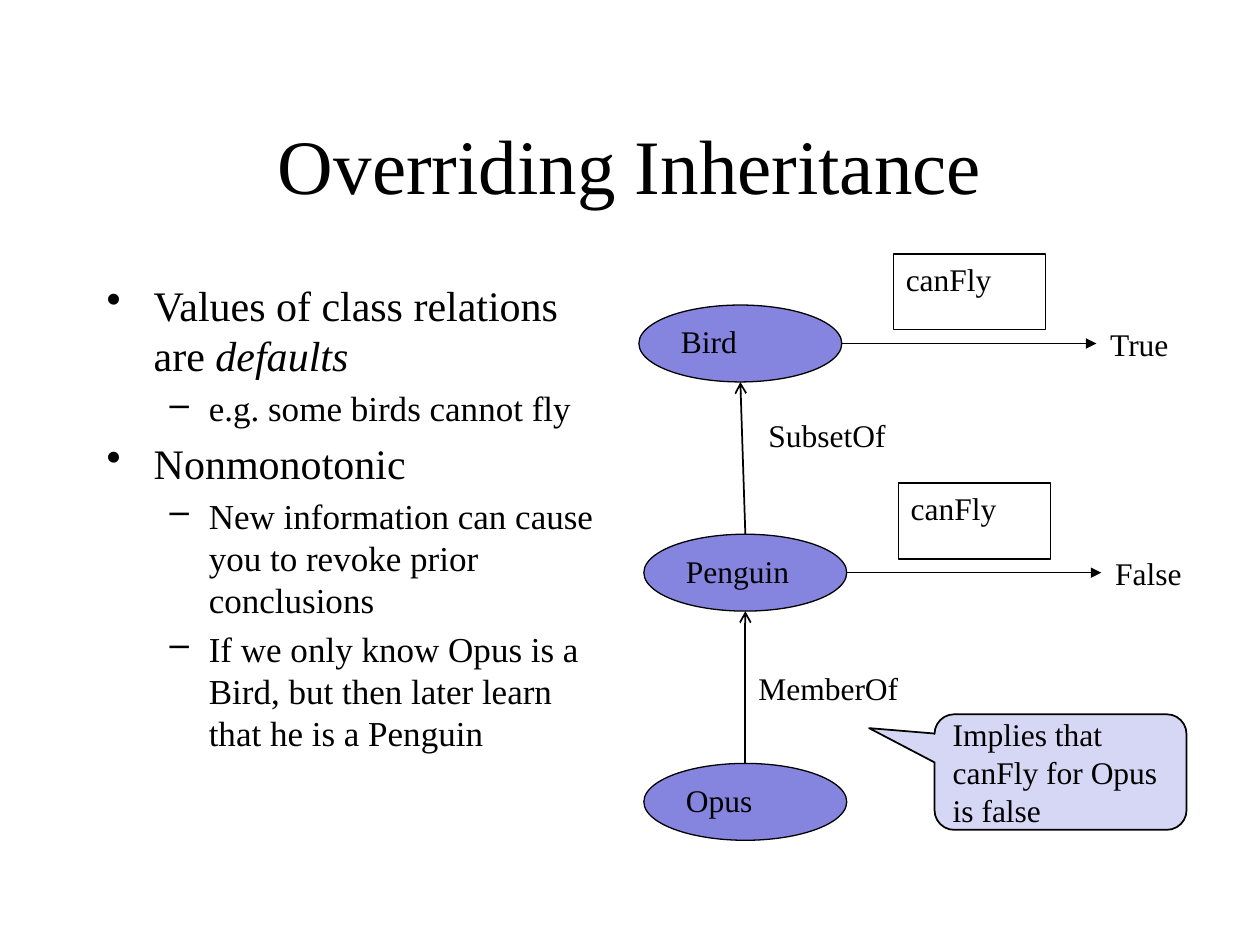
"""Build a slide on overriding inherited defaults in a semantic network."""
from lxml.etree import SubElement
from pptx import Presentation
from pptx.dml.color import RGBColor
from pptx.enum.shapes import MSO_CONNECTOR as CONN, MSO_SHAPE as SHAPE
from pptx.enum.text import MSO_ANCHOR as ANCHOR, PP_ALIGN as ALIGN
from pptx.oxml.ns import qn
from pptx.util import Cm, Pt

FONT = "Times New Roman"
COLORS = {"ink": "000000", "node": "8585E0", "box": "FFFFFF", "note": "D6D6F5"}
NODE_W, NODE_H = 4.09, 1.55
NODES = [
    ("Bird", 12.88, 6.15, "True"),
    ("Penguin", 12.98, 10.77, "False"),
    ("Opus", 12.98, 15.39, None),
]
RELATIONS = [("SubsetOf", 15.24, 8.26), ("MemberOf", 15.04, 13.36)]
BULLETS = [
    (0, [("Values of class relations are ", False), ("defaults", True)]),
    (1, [("e.g. some birds cannot fly", False)]),
    (0, [("Nonmonotonic", False)]),
    (1, [("New information can cause you to revoke prior conclusions", False)]),
    (1, [("If we only know Opus is a Bird, but then later learn that he is a Penguin", False)]),
]
LEVELS = [("•", 24, 0.95, 0.95), ("–", 20, 2.06, 0.79)]


def color(name):
    return RGBColor.from_string(COLORS[name])


def format_run(r, size, italic=False):
    r.font.name, r.font.size, r.font.italic = FONT, Pt(size), italic
    r.font.color.rgb = color("ink")


def set_text(sp, text, size=18, anchor=ANCHOR.TOP, align=ALIGN.LEFT):
    tf = sp.text_frame
    tf.text = text
    tf.word_wrap = True
    tf.vertical_anchor = anchor
    p = tf.paragraphs[0]
    p.alignment = align
    format_run(p.runs[0], size)


def add_title(s, text):
    sp = s.shapes.title
    sp.left, sp.top, sp.width, sp.height = Cm(1.9), Cm(1.7), Cm(21.6), Cm(3.18)
    set_text(sp, text, 44, ANCHOR.MIDDLE, ALIGN.CENTER)


def add_bullets(s, x, y, w, h):
    tf = s.shapes.add_textbox(Cm(x), Cm(y), Cm(w), Cm(h)).text_frame
    tf.word_wrap = True
    for i, (level, parts) in enumerate(BULLETS):
        p = tf.add_paragraph() if i else tf.paragraphs[0]
        mark, size, margin, hang = LEVELS[level]
        p.level = level
        p.space_before = Pt(size * 0.2)
        pPr = p._p.get_or_add_pPr()
        pPr.set("marL", str(Cm(margin)))
        pPr.set("indent", str(-Cm(hang)))
        SubElement(pPr, qn("a:buChar"), char=mark)
        for text, italic in parts:
            r = p.add_run()
            r.text = text
            format_run(r, size, italic)


def add_label(s, text, x, y, w, h, anchor=ANCHOR.TOP):
    set_text(s.shapes.add_textbox(Cm(x), Cm(y), Cm(w), Cm(h)), text, anchor=anchor)


def add_box(s, kind, text, x, y, w, h, fill, line=0.75, anchor=ANCHOR.TOP):
    sp = s.shapes.add_shape(kind, Cm(x), Cm(y), Cm(w), Cm(h))
    sp.shadow.inherit = False
    sp.fill.solid()
    sp.fill.fore_color.rgb = color(fill)
    sp.line.color.rgb = color("ink")
    sp.line.width = Pt(line)
    set_text(sp, text, anchor=anchor)
    return sp


def add_arrow(s, x1, y1, x2, y2, head, width):
    c = s.shapes.add_connector(CONN.STRAIGHT, Cm(x1), Cm(y1), Cm(x2), Cm(y2))
    c.line.color.rgb = color("ink")
    c.line.width = Pt(width)
    SubElement(c.line._get_or_add_ln(), qn("a:tailEnd"), type=head)
    SubElement(c._element.spPr, qn("a:effectLst"))


def add_node(s, name, x, y, value):
    add_box(s, SHAPE.OVAL, name, x, y, NODE_W, NODE_H, "node")
    if value:
        mid = y + NODE_H / 2
        add_arrow(s, x + NODE_W, mid, x + 9.22, mid, "triangle", 0.75)
        add_box(s, SHAPE.RECTANGLE, "canFly", x + 5.13, y - 1.03, 3.07, 1.53, "box")
        add_label(s, value, x + 9.25, y, 2.57, NODE_H, ANCHOR.MIDDLE)


def main():
    prs = Presentation()
    prs.slide_width, prs.slide_height = Cm(25.4), Cm(19.05)
    s = prs.slides.add_slide(prs.slide_layouts[5])
    add_title(s, "Overriding Inheritance")
    add_bullets(s, 1.9, 5.5, 10.6, 11.43)
    for node in NODES:
        add_node(s, *node)
    for upper, lower, (text, x, y) in zip(NODES, NODES[1:], RELATIONS):
        add_arrow(s, lower[1] + NODE_W / 2, lower[2],
                  upper[1] + NODE_W / 2, upper[2] + NODE_H, "arrow", 1)
        add_label(s, text, x, y, 4.09, 1.02)
    note = add_box(s, SHAPE.ROUNDED_RECTANGULAR_CALLOUT, "Implies that canFly for Opus is false",
                   18.84, 14.4, 5.08, 2.33, "note", 1, ANCHOR.MIDDLE)
    for i, value in enumerate((-0.76, -0.38, 0.17)):
        note.adjustments[i] = value
    prs.save("out.pptx")


if __name__ == "__main__":
    main()
